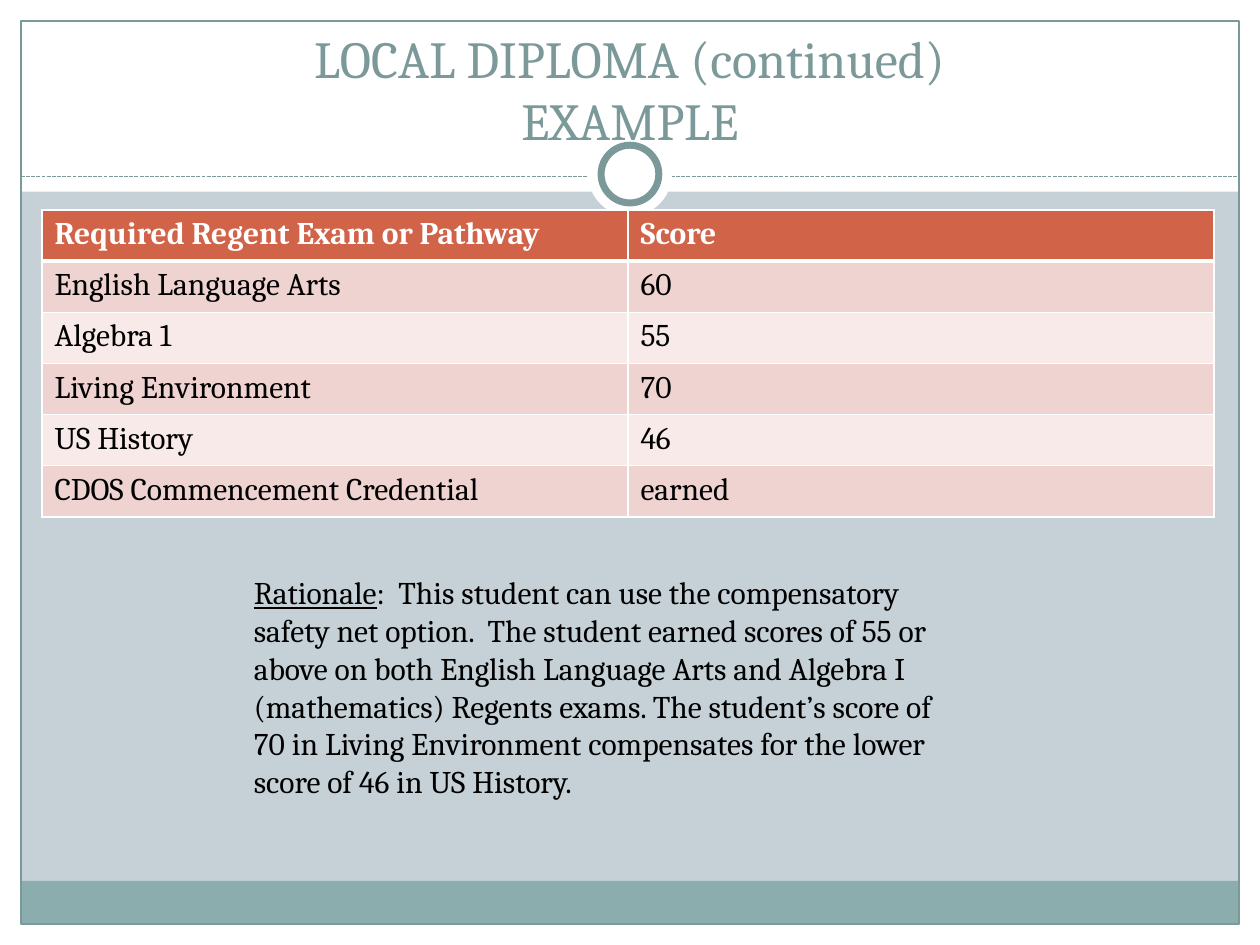
from lxml.etree import SubElement
from pptx import Presentation
from pptx.dml.color import RGBColor
from pptx.enum.dml import MSO_LINE
from pptx.enum.shapes import MSO_CONNECTOR, MSO_SHAPE
from pptx.enum.text import MSO_ANCHOR, MSO_AUTO_SIZE, PP_ALIGN
from pptx.oxml import parse_xml
from pptx.oxml.ns import nsdecls, qn
from pptx.util import Pt

FONT = "Cambria"
WHITE = RGBColor(0xFF, 0xFF, 0xFF)
BLACK = RGBColor(0, 0, 0)
BACKGROUND = RGBColor(0xC5, 0xD1, 0xD7)
TEAL = RGBColor(0x7C, 0x99, 0x9A)
FOOTER = RGBColor(0x8C, 0xAD, 0xAE)
HEADER = RGBColor(0xD1, 0x63, 0x49)
BANDS = [RGBColor(0xF7, 0xEA, 0xE9), RGBColor(0xEE, 0xD3, 0xD0)]

TITLE = "LOCAL DIPLOMA (continued)\vEXAMPLE"
EXAMS = [
    ("Required Regent Exam or Pathway", "Score"),
    ("English Language Arts", "60"),
    ("Algebra 1", "55"),
    ("Living Environment", "70"),
    ("US History", "46"),
    ("CDOS Commencement Credential", "earned"),
]
RATIONALE = [
    ("Rationale", True),
    (":  This student can use the compensatory safety net option.  The student "
     "earned scores of 55 or above on both English Language Arts and Algebra I "
     "(mathematics) Regents exams. The student’s score of 70 in Living Environment "
     "compensates for the lower score of 46 in US History.", False),
]

WIDTH, HEIGHT, MARGIN = 720, 540, 12
INNER_WIDTH = WIDTH - 2 * MARGIN
RULE_TOP = 100.8
RING_CENTER = 99.5
ROW_HEIGHT, COLUMN_WIDTH = 29.25, 334.8

PANELS = [
    (0, HEIGHT - MARGIN, WIDTH, MARGIN, WHITE),
    (0, 0, WIDTH, 109.5, WHITE),
    (0, 0, MARGIN, HEIGHT, WHITE),
    (WIDTH - MARGIN, 0, MARGIN, HEIGHT, WHITE),
    (MARGIN, 503.3, INNER_WIDTH, 24.7, FOOTER),
]


def add_shape(slide, kind, left, top, width, height, fill=None, line=None, weight=0.75):
    shape = slide.shapes.add_shape(kind, Pt(left), Pt(top), Pt(width), Pt(height))
    shape.shadow.inherit = False
    if fill is None:
        shape.fill.background()
    else:
        shape.fill.solid()
        shape.fill.fore_color.rgb = fill
    if line is None:
        shape.line.fill.background()
    else:
        shape.line.color.rgb = line
        shape.line.width = Pt(weight)


def add_circle(slide, diameter, line=None, weight=0):
    add_shape(slide, MSO_SHAPE.OVAL, (WIDTH - diameter) / 2, RING_CENTER - diameter / 2,
              diameter, diameter, WHITE, line, weight)


def style(run, size, color, bold=False, underline=False):
    run.font.name = FONT
    run.font.size = Pt(size)
    run.font.color.rgb = color
    run.font.bold = bold
    run.font.underline = underline


def set_borders(cell, weights):
    properties = cell._tc.get_or_add_tcPr()
    for position, (side, weight) in enumerate(weights.items()):
        border = parse_xml(
            f'<a:ln{side} {nsdecls("a")} w="{Pt(weight)}"><a:solidFill>'
            f'<a:srgbClr val="{WHITE}"/></a:solidFill></a:ln{side}>')
        properties.insert(position, border)


def add_frame(slide):
    for left, top, width, height, fill in PANELS:
        add_shape(slide, MSO_SHAPE.RECTANGLE, left, top, width, height, fill)
    add_shape(slide, MSO_SHAPE.RECTANGLE, MARGIN, MARGIN, INNER_WIDTH,
              HEIGHT - 2 * MARGIN, line=TEAL)
    rule = slide.shapes.add_connector(MSO_CONNECTOR.STRAIGHT, Pt(MARGIN), Pt(RULE_TOP),
                                      Pt(WIDTH - MARGIN), Pt(RULE_TOP))
    rule.line.color.rgb = TEAL
    rule.line.width = Pt(0.75)
    rule.line.dash_style = MSO_LINE.SQUARE_DOT
    SubElement(rule.element.spPr, qn("a:effectLst"))
    add_circle(slide, 48)
    add_circle(slide, 33, TEAL, 4)


def place_title(slide):
    title = slide.shapes.title
    title.left, title.top, title.width, title.height = Pt(24), Pt(18), Pt(672), Pt(72)
    frame = title.text_frame
    frame.text = TITLE
    frame.auto_size = MSO_AUTO_SIZE.NONE
    frame.vertical_anchor = MSO_ANCHOR.BOTTOM
    frame.paragraphs[0].alignment = PP_ALIGN.CENTER
    for run in frame.paragraphs[0].runs:
        style(run, 29.7, TEAL)
    title.element.getparent().append(title.element)


def add_exams(slide):
    table = slide.shapes.add_table(len(EXAMS), 2, Pt(24), Pt(120), Pt(2 * COLUMN_WIDTH),
                                   Pt(len(EXAMS) * ROW_HEIGHT)).table
    for column in table.columns:
        column.width = Pt(COLUMN_WIDTH)
    for index, exam in enumerate(EXAMS):
        table.rows[index].height = Pt(ROW_HEIGHT)
        is_header = index == 0
        for cell, text in zip(table.rows[index].cells, exam):
            cell.text_frame.text = text
            style(cell.text_frame.paragraphs[0].runs[0], 18,
                  WHITE if is_header else BLACK, bold=is_header)
            cell.fill.solid()
            cell.fill.fore_color.rgb = HEADER if is_header else BANDS[index % 2]
            set_borders(cell, {"L": 1, "R": 1, "T": 3 if index == 1 else 1,
                               "B": 3 if is_header else 1})


def add_rationale(slide):
    rationale = slide.shapes.add_textbox(Pt(138), Pt(324), Pt(402), Pt(160))
    frame = rationale.text_frame
    frame.word_wrap = True
    frame.auto_size = MSO_AUTO_SIZE.SHAPE_TO_FIT_TEXT
    for text, underline in RATIONALE:
        run = frame.paragraphs[0].add_run()
        run.text = text
        style(run, 18, BLACK, underline=underline)


def main():
    deck = Presentation()
    deck.slide_width, deck.slide_height = Pt(WIDTH), Pt(HEIGHT)
    slide = deck.slides.add_slide(deck.slide_layouts[5])
    slide.background.fill.solid()
    slide.background.fill.fore_color.rgb = BACKGROUND
    add_frame(slide)
    place_title(slide)
    add_exams(slide)
    add_rationale(slide)
    deck.save("out.pptx")


if __name__ == "__main__":
    main()
